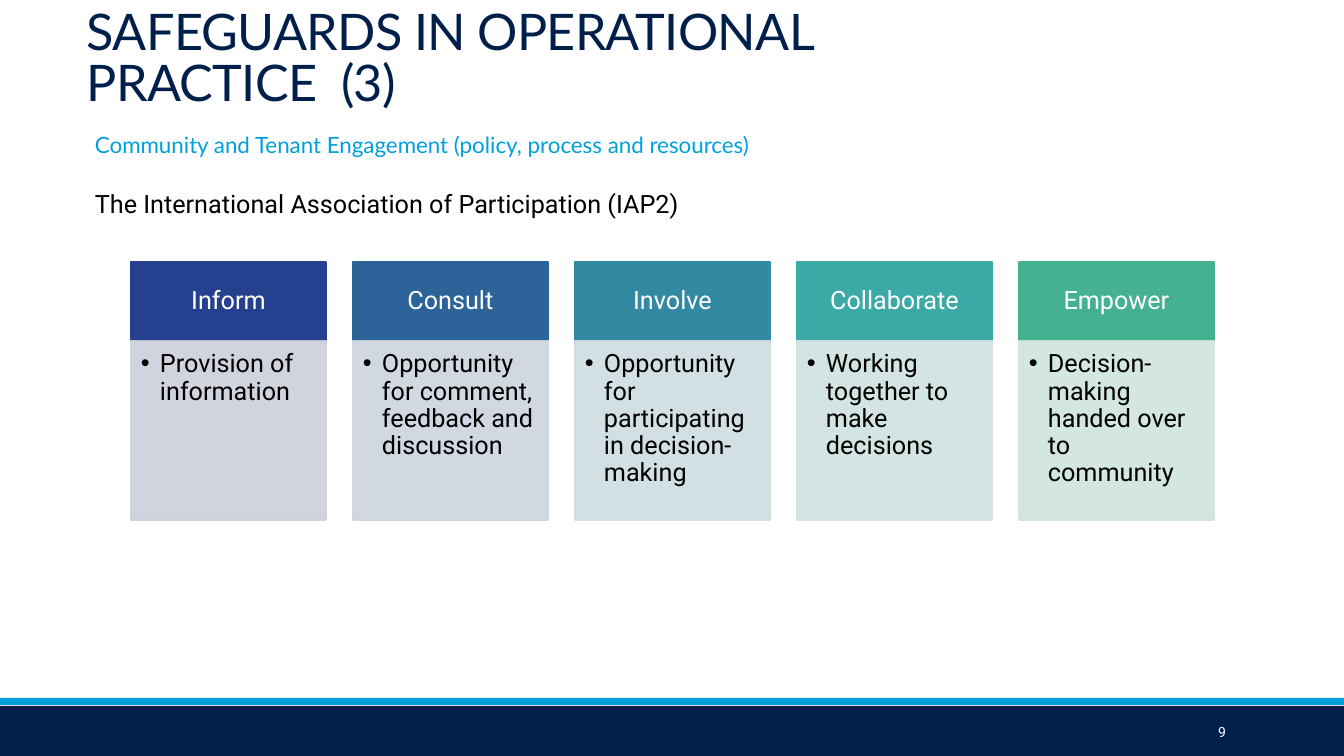
import dataclasses

import lxml.etree
import pptx
import pptx.dml.color
import pptx.enum.shapes
import pptx.enum.text
import pptx.oxml.ns
import pptx.util

Align = pptx.enum.text.PP_ALIGN
Anchor = pptx.enum.text.MSO_ANCHOR
SCALE = 914400 / 100.8


@dataclasses.dataclass(frozen=True)
class Theme:
    navy: str = "001F4B"
    sky: str = "00A0DD"
    white: str = "FFFFFF"
    black: str = "000000"
    heading_font: str = "Lato"
    body_font: str = "Roboto"
    title_size: int = 36
    subtitle_size: int = 16
    body_size: int = 18
    number_size: int = 10


def px(length):
    return pptx.util.Emu(round(length * SCALE))


def rgb(value):
    return pptx.dml.color.RGBColor.from_string(value)


def add_child(parent, tag, **attributes):
    child = lxml.etree.SubElement(parent, pptx.oxml.ns.qn(tag))
    for key, value in attributes.items():
        child.set(key, str(value))


def write(paragraph, text, size, color, font, align=Align.LEFT, line=None,
          before=None, tracking=None, bullet_indent=None):
    paragraph.alignment = align
    if line:
        paragraph.line_spacing = line
    if before:
        paragraph.space_before = pptx.util.Pt(before)
    if bullet_indent:
        properties = paragraph._p.get_or_add_pPr()
        properties.set("marL", str(px(bullet_indent)))
        properties.set("indent", str(-px(bullet_indent)))
        add_child(properties, "a:buFont", typeface="Arial")
        add_child(properties, "a:buChar", char="•")
    run = paragraph.add_run()
    run.text = text
    run.font.name = font
    run.font.size = pptx.util.Pt(size)
    run.font.color.rgb = rgb(color)
    if tracking:
        run._r.get_or_add_rPr().set("spc", str(tracking))


class SlideBuilder:
    def __init__(self, slide, theme):
        self.slide = slide
        self.theme = theme

    def frame(self, holder, anchor, insets):
        frame = holder.text_frame
        frame.word_wrap = True
        frame.vertical_anchor = anchor
        (frame.margin_left, frame.margin_top,
         frame.margin_right, frame.margin_bottom) = map(px, insets)
        return frame

    def text_box(self, left, top, width, height, anchor=Anchor.TOP):
        box = self.slide.shapes.add_textbox(*map(px, (left, top, width, height)))
        return self.frame(box, anchor, (10, 5, 10, 5))

    def block(self, left, top, width, height, color, outlined=False, opacity=100,
              anchor=Anchor.MIDDLE, insets=(14, 8, 14, 8)):
        block = self.slide.shapes.add_shape(
            pptx.enum.shapes.MSO_SHAPE.RECTANGLE, *map(px, (left, top, width, height)))
        block.shadow.inherit = False
        block.fill.solid()
        block.fill.fore_color.rgb = rgb(color)
        if outlined:
            block.line.color.rgb = rgb(color)
            block.line.width = pptx.util.Pt(1.25)
        else:
            block.line.fill.background()
        if opacity < 100:
            for tint in block._element.spPr.iter(pptx.oxml.ns.qn("a:srgbClr")):
                add_child(tint, "a:alpha", val=opacity * 1000)
        return self.frame(block, anchor, insets)

    def stage(self, left, name, color, description, tint):
        theme = self.theme
        header = self.block(left, 262, 195, 78, color, outlined=True)
        write(header.paragraphs[0], name, theme.body_size, theme.white,
              theme.body_font, align=Align.CENTER, line=0.9)
        body = self.block(left, 341, 195, 179, tint, outlined=True, opacity=90,
                          anchor=Anchor.TOP, insets=(10, 10, 14, 16))
        write(body.paragraphs[0], description, theme.body_size, theme.black,
              theme.body_font, line=0.9, bullet_indent=19)


STAGES = [
    ("Inform", "25408F", "Provision of information", "CDCFDB"),
    ("Consult", "2C6499", "Opportunity for comment, feedback and discussion", "CDD4DE"),
    ("Involve", "3389A2", "Opportunity for participating in decision-making", "CEDCE0"),
    ("Collaborate", "3BAAA6", "Working together to make decisions", "CFE2E1"),
    ("Empower", "44B291", "Decision-making handed over to community", "CFE4DC"),
]


def main():
    deck = pptx.Presentation()
    deck.slide_width, deck.slide_height = px(1344), px(756)
    theme = Theme()
    builder = SlideBuilder(deck.slides.add_slide(deck.slide_layouts[6]), theme)

    builder.block(0, 706, 1344, 50, theme.navy)
    builder.block(0, 698, 1344, 7, theme.sky)

    title = builder.text_box(77, 28, 969, 89, Anchor.BOTTOM)
    write(title.paragraphs[0], "SAFEGUARDS IN OPERATIONAL PRACTICE  (3)",
          theme.title_size, theme.navy, theme.heading_font, line=0.85, tracking=-50)

    page_number = builder.text_box(1092, 712, 144, 40, Anchor.MIDDLE)
    write(page_number.paragraphs[0], "9", theme.number_size, theme.white,
          theme.body_font, align=Align.RIGHT)

    intro = builder.text_box(85, 126, 786, 110)
    write(intro.paragraphs[0],
          "Community and Tenant Engagement (policy, process and resources)",
          theme.subtitle_size, theme.sky, theme.heading_font)
    write(intro.add_paragraph(), "The International Association of Participation (IAP2)",
          theme.body_size, theme.black, theme.body_font, before=22)

    for index, stage in enumerate(STAGES):
        builder.stage(131 + 222 * index, *stage)

    deck.save("out.pptx")


if __name__ == "__main__":
    main()
